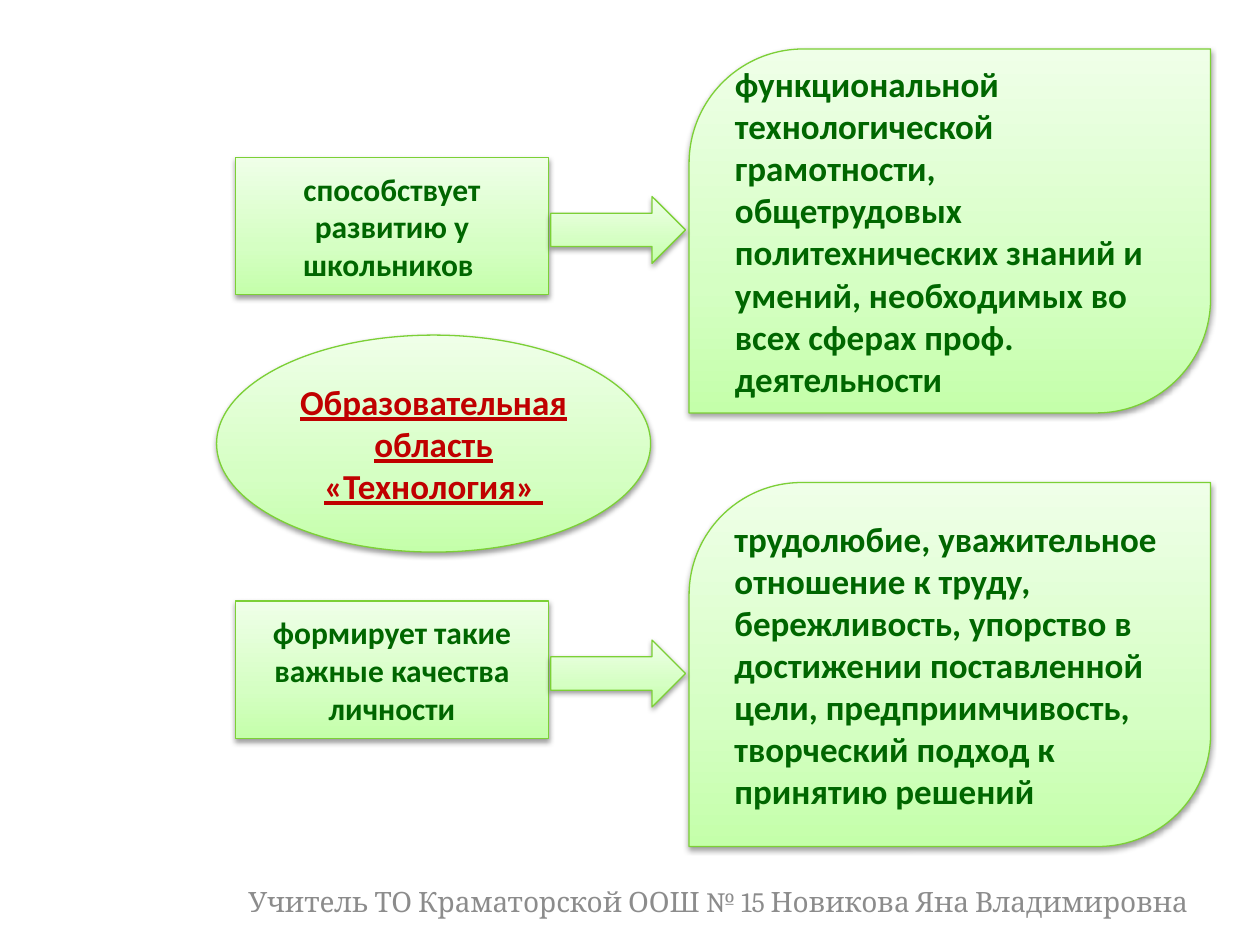
"""Build a slide on what the Technology subject area develops in pupils."""
import lxml.etree
import pptx
import pptx.dml.color
import pptx.enum.shapes
import pptx.enum.text
import pptx.util

Pt = pptx.util.Pt
SHAPES = pptx.enum.shapes.MSO_SHAPE
ALIGN = pptx.enum.text.PP_ALIGN
NAMESPACE = "http://schemas.openxmlformats.org/drawingml/2006/main"

SUBJECT = "Образовательная область «Технология» "
FOOTER = "Учитель ТО Краматорской ООШ № 15 Новикова Яна Владимировна"
ROWS = [
    {"label": "способствует развитию у школьников ",
     "result": "функциональной технологической грамотности, общетрудовых "
               "политехнических знаний и умений, необходимых во всех сферах "
               "проф. деятельности",
     "label_top": 90, "card_top": 28, "corner": 0.314},
    {"label": "формирует такие важные качества личности",
     "result": "трудолюбие, уважительное отношение к труду, бережливость, "
               "упорство в достижении поставленной цели, предприимчивость, "
               "творческий подход к принятию решений",
     "label_top": 343.5, "card_top": 275.75, "corner": 0.309},
]
LABEL_LEFT, LABEL_WIDTH, LABEL_HEIGHT = 134.75, 178.5, 78.5
ARROW_LEFT, ARROW_WIDTH, ARROW_HEIGHT, ARROW_DROP = 314.75, 77, 38.25, 22.25
CARD_LEFT, CARD_WIDTH, CARD_HEIGHT = 393.75, 298, 208

SUBJECT_FONT = {"name": "Calibri", "size": Pt(20), "bold": True, "underline": True}
LABEL_FONT = {"name": "Calibri", "size": Pt(18), "bold": True}
CARD_FONT = {"name": "Calibri", "size": Pt(20), "bold": True}
FOOTER_FONT = {"name": "Cambria", "size": Pt(16)}

GRADIENT = f"""<a:gradFill xmlns:a="{NAMESPACE}" rotWithShape="1"><a:gsLst>
<a:gs pos="0"><a:srgbClr val="C4FFAA"/></a:gs>
<a:gs pos="35000"><a:srgbClr val="D5FFC3"/></a:gs>
<a:gs pos="100000"><a:srgbClr val="EFFFE8"/></a:gs>
</a:gsLst><a:lin ang="16200000" scaled="1"/></a:gradFill>"""
SHADOW = f"""<a:effectLst xmlns:a="{NAMESPACE}">
<a:outerShdw blurRad="40000" dist="20000" dir="5400000" rotWithShape="0">
<a:srgbClr val="000000"><a:alpha val="38000"/></a:srgbClr>
</a:outerShdw></a:effectLst>"""


def color(value):
    return pptx.dml.color.RGBColor.from_string(value)


def write(shape, text, font, font_color, alignment):
    frame = shape.text_frame
    frame.word_wrap = True
    frame.vertical_anchor = pptx.enum.text.MSO_ANCHOR.MIDDLE
    paragraph = frame.paragraphs[0]
    paragraph.alignment = alignment
    run = paragraph.add_run()
    run.text = text
    for name, value in font.items():
        setattr(run.font, name, value)
    run.font.color.rgb = color(font_color)


def add_green_shape(slide, kind, *box):
    shape = slide.shapes.add_shape(kind, *map(Pt, box))
    properties = shape.element.spPr
    properties.append(lxml.etree.fromstring(GRADIENT))
    shape.line.color.rgb = color("7CD036")
    shape.line.width = Pt(0.75)
    properties.append(lxml.etree.fromstring(SHADOW))
    return shape


def main():
    presentation = pptx.Presentation()
    presentation.slide_width, presentation.slide_height = Pt(720), Pt(540)
    slide = presentation.slides.add_slide(presentation.slide_layouts[6])

    footer = slide.shapes.add_textbox(*map(Pt, (123.75, 500.5, 574, 28.75)))
    write(footer, FOOTER, FOOTER_FONT, "8C8C8C", ALIGN.CENTER)
    subject = add_green_shape(slide, SHAPES.OVAL, 123.75, 191.5, 248, 124)
    write(subject, SUBJECT, SUBJECT_FONT, "C00000", ALIGN.CENTER)

    for row in ROWS:
        label = add_green_shape(slide, SHAPES.RECTANGLE, LABEL_LEFT,
                                row["label_top"], LABEL_WIDTH, LABEL_HEIGHT)
        write(label, row["label"], LABEL_FONT, "006600", ALIGN.CENTER)
        card = add_green_shape(slide, SHAPES.ROUND_2_DIAG_RECTANGLE, CARD_LEFT,
                               row["card_top"], CARD_WIDTH, CARD_HEIGHT)
        card.adjustments[0] = row["corner"]
        write(card, row["result"], CARD_FONT, "006600", ALIGN.LEFT)
        add_green_shape(slide, SHAPES.RIGHT_ARROW, ARROW_LEFT,
                        row["label_top"] + ARROW_DROP, ARROW_WIDTH, ARROW_HEIGHT)

    presentation.save("out.pptx")


if __name__ == "__main__":
    main()
